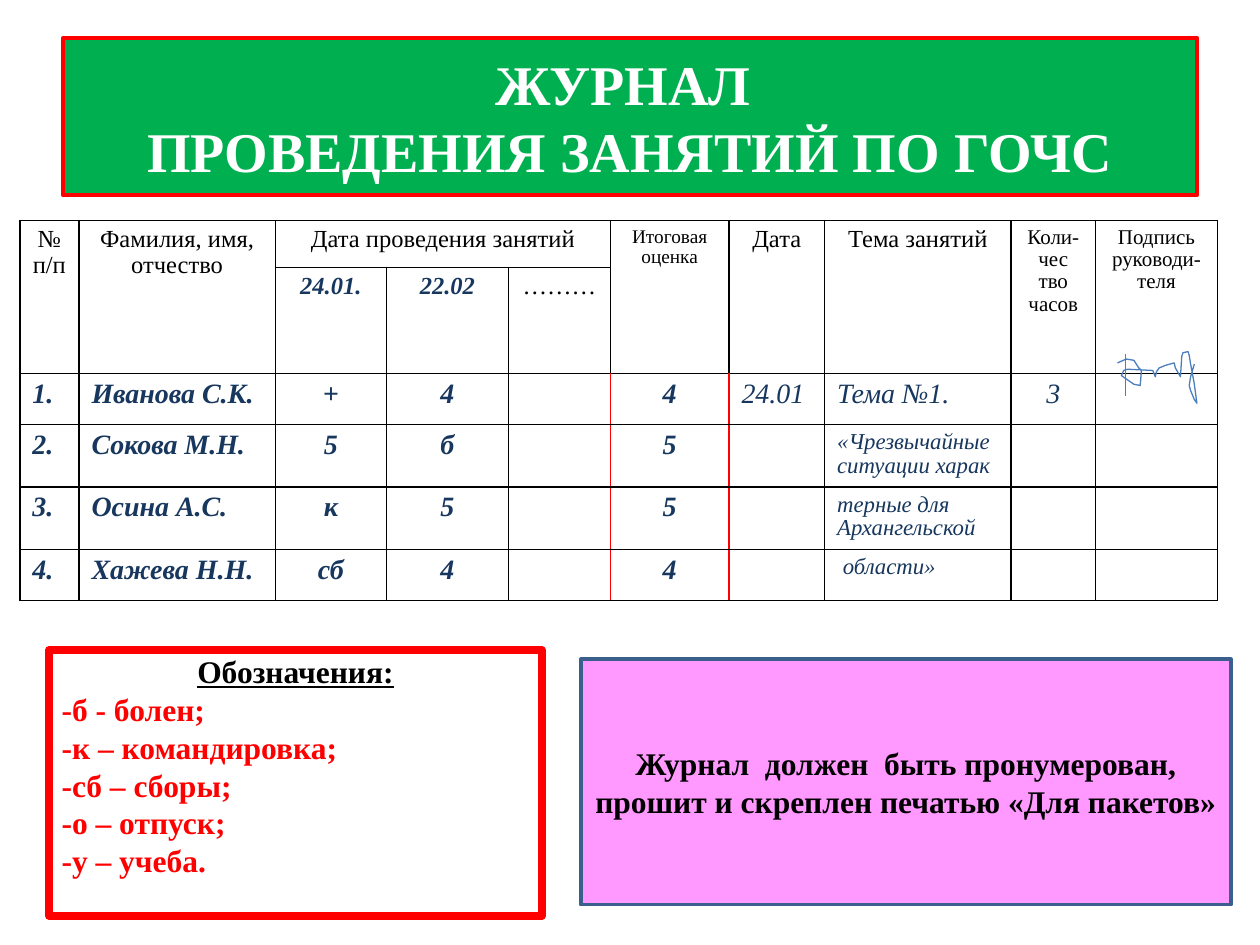
from dataclasses import dataclass

from lxml import etree
from pptx import Presentation
from pptx.dml.color import RGBColor
from pptx.enum.shapes import MSO_CONNECTOR, MSO_SHAPE
from pptx.enum.text import MSO_ANCHOR, MSO_AUTO_SIZE, PP_ALIGN
from pptx.oxml.ns import qn
from pptx.util import Pt

RECTANGLE, STRAIGHT = MSO_SHAPE.RECTANGLE, MSO_CONNECTOR.STRAIGHT
TOP, MIDDLE, NO_AUTOFIT = MSO_ANCHOR.TOP, MSO_ANCHOR.MIDDLE, MSO_AUTO_SIZE.NONE
LEFT, CENTER, JUSTIFY = PP_ALIGN.LEFT, PP_ALIGN.CENTER, PP_ALIGN.JUSTIFY


@dataclass(frozen=True)
class Theme:
    font: str = "Times New Roman"
    white: RGBColor = RGBColor(0xFF, 0xFF, 0xFF)
    black: RGBColor = RGBColor(0x00, 0x00, 0x00)
    red: RGBColor = RGBColor(0xFF, 0x00, 0x00)
    green: RGBColor = RGBColor(0x00, 0xB0, 0x50)
    pink: RGBColor = RGBColor(0xFF, 0x99, 0xFF)
    navy: RGBColor = RGBColor(0x17, 0x37, 0x5E)
    outline: RGBColor = RGBColor(0x3A, 0x5F, 0x8C)
    ink: RGBColor = RGBColor(0x4B, 0x7E, 0xBC)
    title_size: int = 32
    body_size: int = 18
    entry_size: int = 16
    header_size: int = 14
    topic_size: int = 13
    narrow_size: int = 12
    small_size: int = 11
    box_leading: float = 1.2
    table_spacing: float = 0.95


THEME = Theme()
COLUMN_WIDTHS = [33.8, 112.3, 63.4, 69.8, 58.3, 67.7, 54.7, 106.6, 48.2, 69.8]
ROW_HEIGHTS = [26.8, 60.6, 29.2, 35.7, 35.7, 29.2]
GRADE_COLUMN, TOPIC_COLUMN, FIRST_ENTRY_ROW = 5, 7, 2
CENTERED_COLUMNS = (2, 3, 4, 5, 8)
HEADERS = [
    (0, "№п/п", THEME.header_size), (1, "Фамилия, имя, отчество", THEME.header_size),
    (2, "Дата проведения занятий", THEME.header_size),
    (5, "Итоговая оценка", THEME.small_size), (6, "Дата", THEME.header_size),
    (7, "Тема занятий", THEME.header_size), (8, "Коли-чес\nтво часов", THEME.narrow_size),
    (9, "Подпись руководи-теля", THEME.narrow_size),
]
DATES = ["24.01.", "22.02", "………"]
ENTRIES = [
    ["1.", "Иванова С.К.", "+", "4", "", "4", "24.01", "Тема №1.", "3", ""],
    ["2.", "Сокова М.Н.", "5", "б", "", "5", "", "«Чрезвычайные  ситуации харак", "", ""],
    ["3.", "Осина А.С.", "к", "5", "", "5", "", "терные для\nАрхангельской", "", ""],
    ["4.", "Хажева Н.Н.", "сб", "4", "", "4", "", " области»", "", ""],
]
LEGEND = "-б - болен;\n-к – командировка;\n-сб – сборы;\n-о – отпуск;\n-у – учеба."
NOTICE = "Журнал  должен  быть пронумерован, прошит и скреплен печатью «Для пакетов»"
SIGNATURE = [
    (0, 6.5), (5, 4.3), (9.4, 5), (12.2, 9.4), (13.7, 10.8), (13, 19.4), (9.4, 18.7),
    (2.2, 13.7), (3.6, 10.8), (5.8, 10.1), (20.2, 10.8), (21.6, 14.4), (22.3, 11.5),
    (23.8, 9.4), (27.4, 7.9), (32.4, 6.5), (33.1, 9.4), (36, 14.4), (36.7, 2.9),
    (37.4, 0.7), (40.3, 0), (41, 2.2), (41.8, 7.2), (42.5, 10.8), (43.9, 18.7),
    (45.4, 29.5), (43.9, 27.4), (41.8, 22.3), (41, 19.4), (41.8, 14.4), (43.9, 7.2),
]


def write_text(text_frame, text, *, size, fill, spacing=THEME.table_spacing, bold=False,
               italic=False, underline=False, align=LEFT, append=False):
    for index, line in enumerate(text.split("\n")):
        new = append or index > 0
        paragraph = text_frame.add_paragraph() if new else text_frame.paragraphs[0]
        paragraph.text = line
        paragraph.alignment, paragraph.line_spacing = align, spacing
        for run in paragraph.runs:
            font = run.font
            font.name, font.size = THEME.font, Pt(size)
            font.bold, font.italic, font.underline = bold, italic, underline
            font.color.rgb = fill


def set_borders(cell, left, right):
    properties = cell._tc.get_or_add_tcPr()
    sides = [("a:lnL", left), ("a:lnR", right), ("a:lnT", THEME.black), ("a:lnB", THEME.black)]
    for position, (tag, value) in enumerate(sides):
        border = etree.Element(qn(tag), w=str(Pt(1)))
        solid = etree.SubElement(border, qn("a:solidFill"))
        etree.SubElement(solid, qn("a:srgbClr"), val=str(value))
        properties.insert(position, border)


class SlideBuilder:
    def __init__(self, slide, theme):
        self.slide = slide
        self.theme = theme

    def style_box(self, shape, fill, line, weight, anchor=MIDDLE):
        shape.fill.solid()
        shape.fill.fore_color.rgb = fill
        shape.line.color.rgb = line
        shape.line.width = Pt(weight)
        frame = shape.text_frame
        frame.word_wrap, frame.auto_size, frame.vertical_anchor = True, NO_AUTOFIT, anchor
        return frame

    def box_text(self, frame, text, size, fill, **text_format):
        write_text(frame, text, size=size, fill=fill, bold=True,
                   spacing=Pt(size * self.theme.box_leading), **text_format)

    def title(self, text, left, top, width, height):
        shape = self.slide.shapes.title
        shape.left, shape.top, shape.width, shape.height = map(Pt, (left, top, width, height))
        frame = self.style_box(shape, self.theme.green, self.theme.red, 2.25)
        self.box_text(frame, text, self.theme.title_size, self.theme.white, align=CENTER)

    def box(self, left, top, width, height, **style):
        shape = self.slide.shapes.add_shape(RECTANGLE, *map(Pt, (left, top, width, height)))
        shape.shadow.inherit = False
        return self.style_box(shape, **style)

    def table(self, left, top):
        frame = (left, top, sum(COLUMN_WIDTHS), sum(ROW_HEIGHTS))
        table = self.slide.shapes.add_table(
            len(ROW_HEIGHTS), len(COLUMN_WIDTHS), *map(Pt, frame)).table
        table.first_row = table.horz_banding = False
        for column, width in zip(table.columns, COLUMN_WIDTHS):
            column.width = Pt(width)
        red_edges = (GRADE_COLUMN, GRADE_COLUMN + 1)
        for row_index, (row, height) in enumerate(zip(table.rows, ROW_HEIGHTS)):
            row.height = Pt(height)
            for column_index, cell in enumerate(row.cells):
                cell.fill.solid()
                cell.fill.fore_color.rgb = self.theme.white
                set_borders(cell, *(
                    self.theme.red if row_index >= FIRST_ENTRY_ROW and edge in red_edges
                    else self.theme.black for edge in (column_index, column_index + 1)))
        return table

    def fill_journal(self, table):
        theme = self.theme
        for column, text, size in HEADERS:
            cell = table.cell(0, column)
            cell.merge(table.cell(0, 4) if column == 2 else table.cell(1, column))
            write_text(cell.text_frame, text, size=size, fill=theme.black, align=CENTER)
        for column, text in enumerate(DATES, start=2):
            dated = text[0].isdigit()
            write_text(table.cell(1, column).text_frame, text, size=theme.header_size,
                       fill=theme.navy if dated else theme.black, bold=dated, italic=dated,
                       align=CENTER)
        for row, entry in enumerate(ENTRIES, start=FIRST_ENTRY_ROW):
            for column, text in enumerate(entry):
                if not text:
                    continue
                continued = column == TOPIC_COLUMN and row > FIRST_ENTRY_ROW
                align = CENTER if column in CENTERED_COLUMNS else LEFT
                if (row, column) == (FIRST_ENTRY_ROW, 1):
                    align = JUSTIFY
                write_text(table.cell(row, column).text_frame, text, fill=theme.navy,
                           size=theme.topic_size if continued else theme.entry_size,
                           bold=column <= GRADE_COLUMN, italic=True, align=align)

    def ink_line(self, line):
        line.color.rgb = self.theme.ink
        line.width = Pt(0.75)

    def stroke(self, x, top, bottom):
        connector = self.slide.shapes.add_connector(STRAIGHT, *map(Pt, (x, top, x, bottom)))
        self.ink_line(connector.line)
        etree.SubElement(connector._element.spPr, qn("a:effectLst"))

    def signature(self, left, top):
        points = [(Pt(left + x), Pt(top + y)) for x, y in SIGNATURE]
        builder = self.slide.shapes.build_freeform(*points[0])
        builder.add_line_segments(points[1:], close=False)
        shape = builder.convert_to_shape()
        shape.shadow.inherit = False
        shape.fill.background()
        self.ink_line(shape.line)


def main():
    presentation = Presentation()
    presentation.slide_width, presentation.slide_height = Pt(720), Pt(540)
    slide = presentation.slides.add_slide(presentation.slide_layouts[5])
    builder = SlideBuilder(slide, THEME)
    builder.title("ЖУРНАЛ \vПРОВЕДЕНИЯ ЗАНЯТИЙ ПО ГОЧС", 36, 21.6, 648, 90)
    builder.fill_journal(builder.table(11.3, 126))
    legend = builder.box(28.1, 371.5, 281.5, 151.9, fill=THEME.white, line=THEME.red,
                         weight=4.5, anchor=TOP)
    legend.margin_top = Pt(1.2)
    builder.box_text(legend, "Обозначения:", THEME.body_size, THEME.black,
                     underline=True, align=CENTER)
    builder.box_text(legend, LEGEND, THEME.body_size, THEME.red, append=True)
    notice = builder.box(331.9, 376.6, 371.5, 140.4, fill=THEME.pink, line=THEME.outline, weight=2)
    builder.box_text(notice, NOTICE, THEME.body_size, THEME.black, align=CENTER)
    builder.stroke(643, 202.3, 226.1)
    builder.signature(638.6, 200.9)
    presentation.save("out.pptx")


if __name__ == "__main__":
    main()
